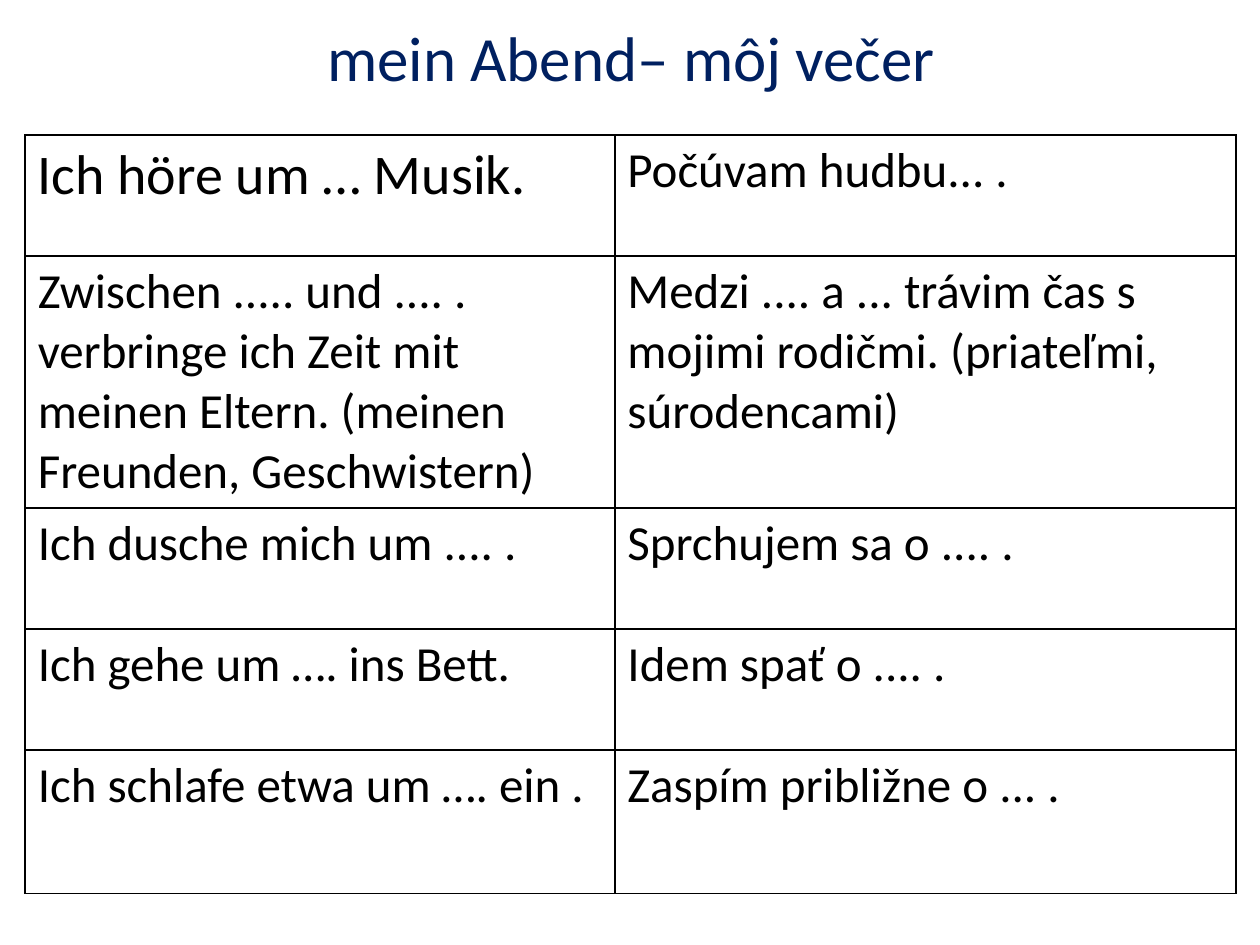
from typing import NamedTuple

from lxml.etree import SubElement
from pptx import Presentation
from pptx.dml.color import RGBColor
from pptx.enum.text import MSO_ANCHOR, PP_ALIGN
from pptx.oxml.ns import qn
from pptx.util import Inches, Pt

COLORS = {"title": "002060", "text": "000000", "line": "000000"}
FONT = "Calibri"


class Row(NamedTuple):
    height: float
    german: list[str]
    slovak: list[str]
    size: int = 28  # size of the German text


ROWS = [
    Row(0.96, ["Ich höre um … Musik."], ["Počúvam hudbu... ."], 32),
    Row(1.65,
        ["Zwischen ..... und .... .",
         "verbringe ich Zeit mit meinen Eltern. (meinen Freunden, Geschwistern)"],
        ["Medzi .... a ... trávim čas s mojimi rodičmi. (priateľmi, súrodencami)"]),
    Row(0.96, ["Ich dusche mich um .... ."], ["Sprchujem sa o .... ."]),
    Row(0.96, ["Ich gehe um …. ins Bett."], ["Idem spať o .... ."]),
    Row(1.14, ["Ich schlafe etwa um …. ein ."], ["Zaspím približne o ... ."]),
]
WIDTHS = [4.68, 4.93]


def add_run(para, text: str, size: int, color: str) -> None:
    run = para.add_run()
    run.text = text
    run.font.name = FONT
    run.font.size = Pt(size)
    run.font.color.rgb = RGBColor.from_string(COLORS[color])


def add_lines(cell) -> None:
    props = cell._tc.get_or_add_tcPr()
    for side in ("a:lnL", "a:lnR", "a:lnT", "a:lnB"):
        line = SubElement(props, qn(side), w=str(Pt(1)))
        fill = SubElement(line, qn("a:solidFill"))
        SubElement(fill, qn("a:srgbClr"), val=COLORS["line"])


def fill_cell(cell, lines: list[str], size: int) -> None:
    add_lines(cell)
    cell.fill.background()
    frame = cell.text_frame
    for i, text in enumerate(lines):
        para = frame.add_paragraph() if i else frame.paragraphs[0]
        add_run(para, text, size, "text")


def main() -> None:
    deck = Presentation()
    deck.slide_width, deck.slide_height = Inches(10), Inches(7.5)
    slide = deck.slides.add_slide(deck.slide_layouts[5])

    # Title
    title = slide.shapes.title
    title.left, title.top = Inches(0.51), Inches(0.13)
    title.width, title.height = Inches(9), Inches(0.63)
    title.text_frame.vertical_anchor = MSO_ANCHOR.MIDDLE
    para = title.text_frame.paragraphs[0]
    para.alignment = PP_ALIGN.CENTER
    add_run(para, "mein Abend– môj večer", 36, "title")

    # Phrase table
    frame = slide.shapes.add_table(
        len(ROWS), len(WIDTHS), Inches(0.2), Inches(1.07),
        Inches(sum(WIDTHS)), Inches(5.98))
    table = frame.table
    table.first_row = table.horz_banding = False
    for col, width in zip(table.columns, WIDTHS):
        col.width = Inches(width)
    for i, row in enumerate(ROWS):
        table.rows[i].height = Inches(row.height)
        fill_cell(table.cell(i, 0), row.german, row.size)
        fill_cell(table.cell(i, 1), row.slovak, 28)
    frame.height = Inches(5.98)

    deck.save("out.pptx")


if __name__ == "__main__":
    main()
